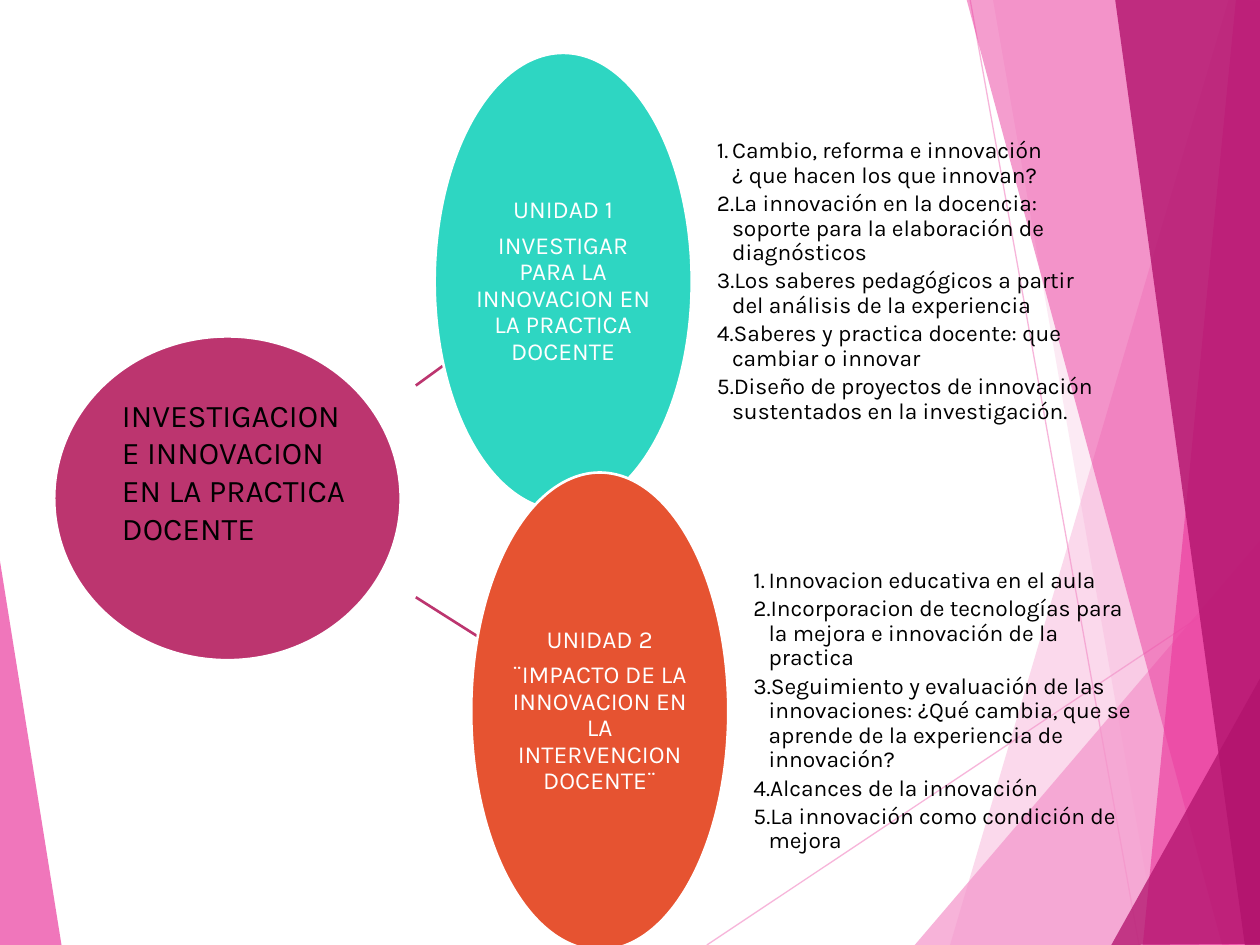
from lxml.etree import SubElement
from pptx import Presentation
from pptx.dml.color import RGBColor
from pptx.enum.shapes import MSO_CONNECTOR, MSO_SHAPE
from pptx.enum.text import MSO_ANCHOR as Anchor, PP_ALIGN as Align
from pptx.oxml.ns import qn
from pptx.util import Inches, Pt

FONT = "Karla"
PINK, MAGENTA, PLUM = "F496CB", "EB3D9F", "B2136D"
BERRY, WHITE, BLACK = "BC356F", "FFFFFF", "000000"

BACKDROP_LINES = [((5.61, 7.5), (10.01, 4.57)), ((7.7, 0), (9.04, 7.5))]
BACKDROP_FACETS = [
    (PINK, 36, [(9.75, 0), (7.54, 7.5), (10.02, 7.51), (10.01, 0.01)]),
    (PINK, 20, [(7.88, -0.01), (9.19, 7.5), (10.01, 7.5), (10.01, -0.01)]),
    (PINK, 72, [(7.26, 7.5), (10, 4.29), (10.01, 7.5)]),
    (MAGENTA, 50, [(7.67, -0.01), (9.7, 7.5), (10.01, 7.49), (10.01, -0.01)]),
    (MAGENTA, 66, [(9.81, -0.01), (9.07, 7.5), (10.01, 7.5), (10, -0.01)]),
    (PLUM, 80, [(8.85, -0.01), (9.88, 7.5), (10.02, 7.5), (10, -0.01)]),
    (PLUM, 76, [(8.82, 7.5), (10.02, 5.35), (10.02, 7.49)]),
    (MAGENTA, 70, [(-0.01, 4.39), (0.49, 7.51), (-0.01, 7.5)]),
]
SPOKES = [((3.3, 4.74), (3.79, 5.05)), ((3.3, 3.06), (3.52, 2.9))]
COURSE = "INVESTIGACION E INNOVACION EN LA PRACTICA DOCENTE"
UNITS = [
    ((3.45, 0.42, 2.04, 3.63), "2ED6C2",
     ["UNIDAD 1", "INVESTIGAR PARA LA INNOVACION EN LA PRACTICA DOCENTE"],
     ["Cambio, reforma e innovación ¿ que hacen los que innovan?",
      "La innovación en la docencia: soporte para la elaboración de diagnósticos",
      "Los saberes pedagógicos a partir del análisis de la experiencia",
      "Saberes y practica docente: que cambiar o innovar",
      "Diseño de proyectos de innovación sustentados en la investigación."]),
    ((3.74, 3.75, 2.04, 3.79), "E65331",
     ["UNIDAD 2", "¨IMPACTO DE LA INNOVACION EN LA INTERVENCION DOCENTE¨"],
     ["Innovacion educativa en el aula",
      "Incorporacion de tecnologías para la mejora e innovación de la practica",
      "Seguimiento y evaluación de las innovaciones: ¿Qué cambia, que se aprende "
      "de la experiencia de innovación?",
      "Alcances de la innovación",
      "La innovación como condición de mejora"]),
]


def paint(fill, color, opacity=100):
    """Give a fill a solid colour and, below 100 percent, an opacity."""
    fill.solid()
    fill.fore_color.rgb = RGBColor.from_string(color)
    if opacity < 100:
        color_element = fill._xPr.find(qn("a:solidFill"))[0]
        SubElement(color_element, qn("a:alpha"), val=str(opacity * 1000))


def add_line(slide, start, end, color, width, opacity=100):
    """Draw a straight line between two points."""
    points = [Inches(value) for value in (*start, *end)]
    connector = slide.shapes.add_connector(MSO_CONNECTOR.STRAIGHT, *points)
    connector.line.width = Pt(width)
    paint(connector.line.fill, color, opacity)
    SubElement(connector._element.spPr, qn("a:effectLst"))


def add_facet(slide, color, opacity, corners):
    """Draw a translucent polygon of the backdrop."""
    start, *others = [(Inches(x), Inches(y)) for x, y in corners]
    builder = slide.shapes.build_freeform(*start)
    builder.add_line_segments(others, close=True)
    shape = builder.convert_to_shape()
    shape.shadow.inherit = False
    paint(shape.fill, color, opacity)
    shape.line.fill.background()


def add_ellipse(slide, box, color):
    """Draw a filled ellipse with a white outline."""
    shape = slide.shapes.add_shape(MSO_SHAPE.OVAL, *map(Inches, box))
    shape.shadow.inherit = False
    paint(shape.fill, color)
    paint(shape.line.fill, WHITE)
    shape.line.width = Pt(1.5)
    return shape


def add_text_box(slide, box):
    """Add an empty text box and return its text frame."""
    return slide.shapes.add_textbox(*map(Inches, box)).text_frame


def set_margins(text_frame, margin):
    """Set the same inner margin on all four sides."""
    text_frame.margin_left = text_frame.margin_right = Inches(margin)
    text_frame.margin_top = text_frame.margin_bottom = Inches(margin)


def write(text_frame, lines, size, color, align=Align.LEFT, anchor=Anchor.MIDDLE):
    """Write one formatted paragraph per line."""
    text_frame.text = "\n".join(lines)
    text_frame.word_wrap = True
    text_frame.vertical_anchor = anchor
    for paragraph in text_frame.paragraphs:
        paragraph.alignment = align
        for run in paragraph.runs:
            run.font.name = FONT
            run.font.size = Pt(size)
            run.font.color.rgb = RGBColor.from_string(color)


def set_spacing(text_frame, after):
    """Tighten the lines and set the gap after each paragraph."""
    for paragraph in text_frame.paragraphs:
        paragraph.line_spacing = 0.9
        paragraph.space_after = Pt(after)


def number_paragraphs(text_frame):
    """Number the paragraphs with a hanging indent."""
    indent = Inches(0.12)
    for paragraph in text_frame.paragraphs:
        paragraph.level = 1
        properties = paragraph._p.get_or_add_pPr()
        properties.set("marL", str(indent))
        properties.set("indent", str(-indent))
        SubElement(properties, qn("a:buFont"), typeface="+mj-lt")
        SubElement(properties, qn("a:buAutoNum"), type="arabicPeriod")


def add_unit(slide, box, color, heading, topics):
    """Draw a unit's ellipse and its numbered topics on the right."""
    left, top, width, height = box
    heading_frame = add_ellipse(slide, box, color).text_frame
    write(heading_frame, heading, 14, WHITE, Align.CENTER)
    set_margins(heading_frame, 0.01)
    set_spacing(heading_frame, 5)

    topics_frame = add_text_box(slide, (left + width + 0.2, top, 3.05, height))
    write(topics_frame, topics, 13, BLACK)
    set_margins(topics_frame, 0)
    set_spacing(topics_frame, 2)
    number_paragraphs(topics_frame)


def main():
    """Build the slide and save it."""
    presentation = Presentation()
    presentation.slide_width = Inches(10)
    presentation.slide_height = Inches(7.5)
    slide = presentation.slides.add_slide(presentation.slide_layouts[6])

    for start, end in BACKDROP_LINES:
        add_line(slide, start, end, PINK, 0.75, 70)
    for facet in BACKDROP_FACETS:
        add_facet(slide, *facet)

    for start, end in SPOKES:
        add_line(slide, start, end, BERRY, 1.5)
    add_ellipse(slide, (0.43, 2.67, 2.75, 2.57), BERRY)
    for unit in UNITS:
        add_unit(slide, *unit)
    course_frame = add_text_box(slide, (0.87, 3.09, 2.07, 1.31))
    write(course_frame, [COURSE], 18, BLACK, anchor=Anchor.TOP)

    presentation.save("out.pptx")


if __name__ == "__main__":
    main()
